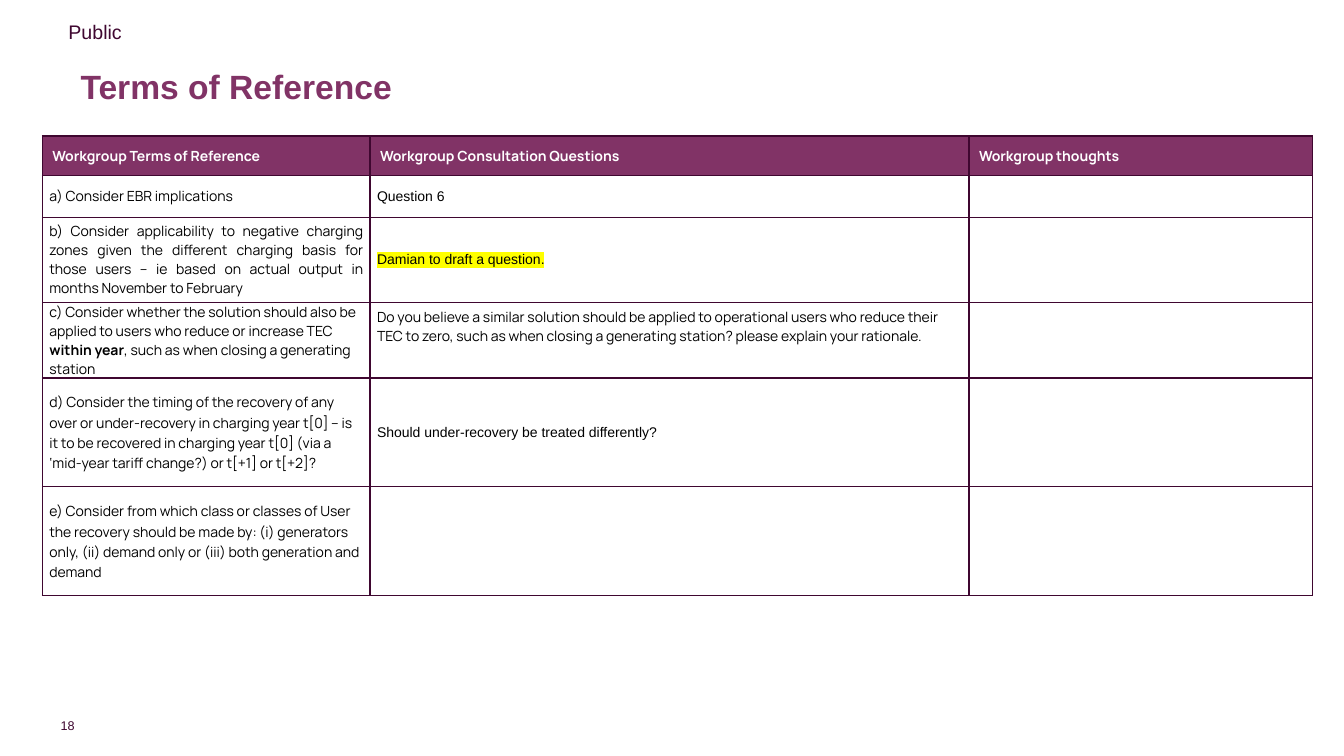
from dataclasses import dataclass

import pptx
import pptx.dml.color
import pptx.enum.text
import pptx.oxml
import pptx.oxml.ns
import pptx.util

EMU_PER_PX = 9144
PURPLE, DARK, WHITE, BLACK, YELLOW = "813366", "3F0730", "FFFFFF", "000000", "FFFF00"
ARIAL, MANROPE = "Arial", "Manrope"
ALIGN = pptx.enum.text.PP_ALIGN
ANCHOR = pptx.enum.text.MSO_ANCHOR
AUTO = pptx.enum.text.MSO_AUTO_SIZE


@dataclass(frozen=True)
class Run:
    text: str
    font: str = MANROPE
    size: int = 10
    color: str = BLACK
    bold: bool = False
    highlight: str | None = None


@dataclass(frozen=True)
class Entry:
    runs: tuple[Run, ...] = ()
    bottom: int = 0


@dataclass(frozen=True)
class Row:
    height: int
    term: Entry
    question: Entry = Entry()
    align: ALIGN = ALIGN.LEFT
    after: int = 6
    spacing: float = 1.0


@dataclass(frozen=True)
class Label:
    box: tuple[int, int, int, int]
    run: Run
    align: ALIGN = ALIGN.LEFT
    anchor: ANCHOR = ANCHOR.TOP
    auto: AUTO = AUTO.SHAPE_TO_FIT_TEXT
    wrap: bool = True
    inset: tuple[int, int] = (10, 5)
    spacing: float = 1.0


LABELS = (
    Label((59, 712, 15, 15), Run("18", ARIAL, 9, DARK), align=ALIGN.RIGHT,
          anchor=ANCHOR.MIDDLE, wrap=False, inset=(0, 0)),
    Label((58, 15, 500, 34), Run("Public", ARIAL, 14, DARK)),
    Label((70, 40, 1062, 95), Run("Terms of Reference", ARIAL, 24, PURPLE, True),
          anchor=ANCHOR.MIDDLE, auto=AUTO.NONE, spacing=0.9),
)
HEADINGS = ("Workgroup Terms of Reference", "Workgroup Consultation Questions", "Workgroup thoughts")
HEADING_HEIGHT = 39
COLUMN_WIDTHS = (325, 594, 341)
ROWS = (
    Row(42, Entry((Run("a) Consider EBR implications"),)),
        Entry((Run("Question 6", ARIAL),)), ALIGN.JUSTIFY),
    Row(84, Entry((Run("b) Consider applicability to negative charging zones given the different "
                       "charging basis for those users – ie based on actual output in months "
                       "November to February"),)),
        Entry((Run("Damian to draft a question.", ARIAL, highlight=YELLOW),)), ALIGN.JUSTIFY),
    Row(75, Entry((Run("c) Consider whether the solution should also be applied to users who "
                       "reduce or increase TEC "),
                   Run("within year", bold=True),
                   Run(", such as when closing a generating station"))),
        Entry((Run("Do you believe a similar solution should be applied to operational users who "
                   "reduce their TEC to zero, such as when closing a generating station? please "
                   "explain your rationale."),), bottom=27)),
    Row(108, Entry((Run("d) Consider the timing of the recovery of any over or under-recovery in "
                        "charging year t[0] – is it to be recovered in charging year t[0] (via a "
                        "‘mid-year tariff change?) or t[+1] or t[+2]?"),)),
        Entry((Run("Should under-recovery be treated differently?", ARIAL),)),
        after=8, spacing=1.07),
    Row(108, Entry((Run("e) Consider from which class or classes of User the recovery should be made "
                        "by: (i) generators only, (ii) demand only or (iii) both generation and "
                        "demand"),)),
        after=8, spacing=1.07),
)


def px(n: int) -> int:
    return pptx.util.Emu(n * EMU_PER_PX)


def rgb(color: str) -> pptx.dml.color.RGBColor:
    return pptx.dml.color.RGBColor.from_string(color)


def xml(body: str):
    tag, rest = body.split(" ", 1)
    return pptx.oxml.parse_xml(f"<a:{tag} {pptx.oxml.ns.nsdecls('a')} {rest}")


def write(tf, *runs: Run, align: ALIGN = ALIGN.LEFT, after: int = 0, spacing: float = 1.0) -> None:
    p = tf.paragraphs[0]
    p.alignment = align
    p.space_after = pptx.util.Pt(after)
    p.line_spacing = spacing
    for run in runs:
        r = p.add_run()
        r.text = run.text
        r.font.name = run.font
        r.font.size = pptx.util.Pt(run.size)
        r.font.bold = run.bold
        r.font.color.rgb = rgb(run.color)
        if run.highlight:
            fill = r.font._element.find(pptx.oxml.ns.qn("a:solidFill"))
            fill.addnext(xml(f'highlight ><a:srgbClr val="{run.highlight}"/></a:highlight>'))


def add_label(s, label: Label) -> None:
    tf = s.shapes.add_textbox(*map(px, label.box)).text_frame
    tf.word_wrap = label.wrap
    tf.auto_size = label.auto
    tf.vertical_anchor = label.anchor
    tf.margin_left = tf.margin_right = px(label.inset[0])
    tf.margin_top = tf.margin_bottom = px(label.inset[1])
    write(tf, label.run, align=label.align, spacing=label.spacing)


def style_cell(cell, fill: str | None = None) -> None:
    cell.vertical_anchor = ANCHOR.MIDDLE
    tcPr = cell._tc.get_or_add_tcPr()
    for side in "LRTB":
        tcPr.append(xml(f'ln{side} w="12700"><a:solidFill><a:srgbClr val="{DARK}"/>'
                        f'</a:solidFill></a:ln{side}>'))
    if fill:
        cell.fill.solid()
        cell.fill.fore_color.rgb = rgb(fill)
    else:
        cell.fill.background()


def add_terms_table(s) -> None:
    heights = (HEADING_HEIGHT, *(row.height for row in ROWS))
    table = s.shapes.add_table(len(heights), len(COLUMN_WIDTHS), px(42), px(135),
                               px(sum(COLUMN_WIDTHS)), px(sum(heights))).table
    table.first_row = table.horz_banding = False
    for column, width in zip(table.columns, COLUMN_WIDTHS):
        column.width = px(width)
    for table_row, height in zip(table.rows, heights):
        table_row.height = px(height)
    for i, heading in enumerate(HEADINGS):
        cell = table.cell(0, i)
        style_cell(cell, PURPLE)
        write(cell.text_frame, Run(heading, color=WHITE, bold=True), align=ALIGN.JUSTIFY)
    for j, row in enumerate(ROWS, 1):
        for i, entry in enumerate((row.term, row.question, Entry())):
            cell = table.cell(j, i)
            style_cell(cell)
            if entry.runs:
                cell.margin_left = cell.margin_right = px(7)
                cell.margin_top, cell.margin_bottom = px(0), px(entry.bottom)
                write(cell.text_frame, *entry.runs, align=row.align,
                      after=row.after, spacing=row.spacing)


def main() -> None:
    prs = pptx.Presentation()
    prs.slide_width, prs.slide_height = px(1333), px(750)
    s = prs.slides.add_slide(prs.slide_layouts[6])
    for label in LABELS:
        add_label(s, label)
    add_terms_table(s)
    prs.save("out.pptx")


if __name__ == "__main__":
    main()
